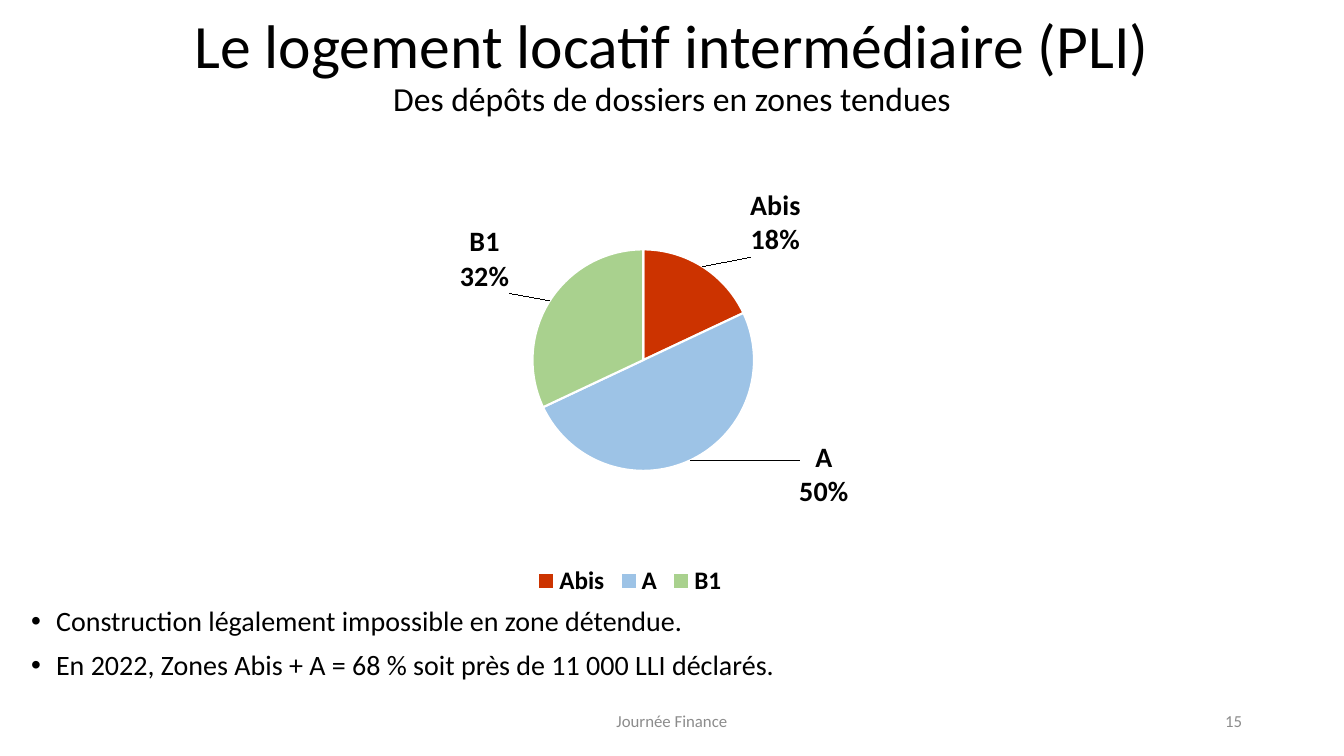
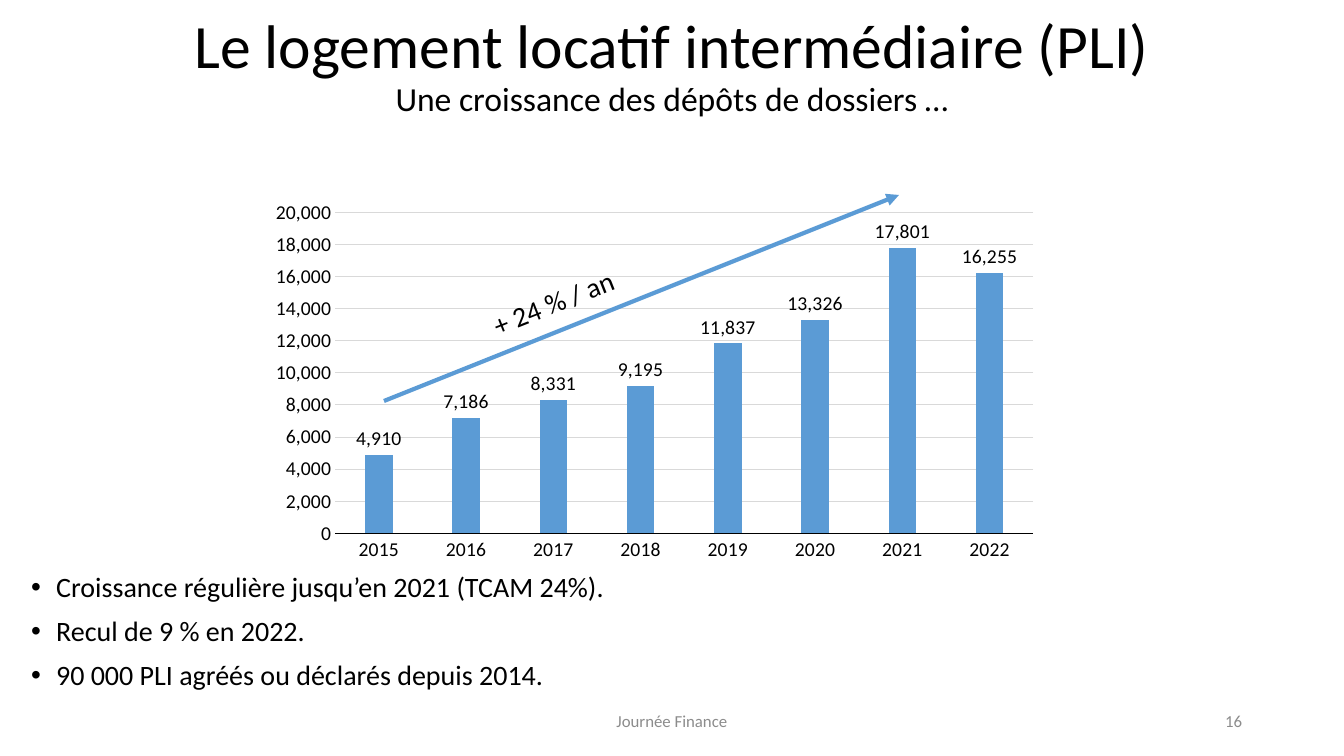
import copy

import pptx
import pptx.chart.data
import pptx.dml.color
import pptx.enum.chart
import pptx.enum.shapes
import pptx.enum.text
import pptx.oxml
import pptx.oxml.ns
import pptx.util

SCALE = 914400 / 100.8
FONT = "Calibri"
BLACK, GREY, GRID = "000000", "8C8C8C", "D9D9D9"
WHITE, BLUE = "FFFFFF", "5B9BD5"
ZONES = {"Abis": ("CC3300", 18), "A": ("9DC3E6", 50), "B1": ("A9D18E", 32)}
SHIFTS = [(0.05, -0.01), (0.12, -0.06), (-0.04, -0.01)]
FILES = {
    "2015": 4910, "2016": 7186, "2017": 8331, "2018": 9195,
    "2019": 11837, "2020": 13326, "2021": 17801, "2022": 16255,
}
ALIGN = pptx.enum.text.PP_ALIGN
CHART = pptx.enum.chart
qn = pptx.oxml.ns.qn


def px(*nums):
    return [pptx.util.Emu(round(n * SCALE)) for n in nums]


def rgb(code):
    return pptx.dml.color.RGBColor.from_string(code)


def xml(tag, body="", attrs=""):
    """Make one element in the namespace of its prefix."""
    names = pptx.oxml.ns.nsdecls("a", "c")
    return pptx.oxml.parse_xml(f"<{tag} {names} {attrs}>{body}</{tag}>")


def style(font, size, color=BLACK, bold=False):
    font.name, font.size, font.bold = FONT, pptx.util.Pt(size), bold
    font.color.rgb = rgb(color)


def stroke(line, color, width):
    line.color.rgb = rgb(color)
    line.width = pptx.util.Pt(width)


def write(par, text, size, color=BLACK):
    run = par.add_run()
    run.text = text
    style(run.font, size, color)


def place(shape, box):
    shape.left, shape.top, shape.width, shape.height = px(*box)


def set_title(slide, sub):
    title = slide.shapes.title
    place(title, (168, 9, 1008, 116))
    frame = title.text_frame
    frame.auto_size = pptx.enum.text.MSO_AUTO_SIZE.NONE
    frame.vertical_anchor = pptx.enum.text.MSO_ANCHOR.MIDDLE
    par = frame.paragraphs[0]
    par.alignment, par.line_spacing = ALIGN.CENTER, 0.9
    write(par, "Le logement locatif intermédiaire (PLI)", 44)
    par.add_line_break()
    write(par, sub, 24)


def set_list(slide, box, items):
    body = slide.placeholders[1]
    place(body, box)
    frame = body.text_frame
    frame.auto_size = pptx.enum.text.MSO_AUTO_SIZE.NONE
    indent = px(25)[0]
    for num, item in enumerate(items):
        par = frame.add_paragraph() if num else frame.paragraphs[0]
        props = par._p.get_or_add_pPr()
        props.set("marL", str(indent))
        props.set("indent", str(-indent))
        props.append(xml("a:buFont", attrs='typeface="Arial"'))
        props.append(xml("a:buChar", attrs='char="•"'))
        par.alignment, par.line_spacing = ALIGN.JUSTIFY, 0.9
        par.space_before = pptx.util.Pt(10 if num else 0)
        write(par, item, 20)


def add_text(slide, box, text, size, color=BLACK, align=ALIGN.LEFT):
    shape = slide.shapes.add_textbox(*px(*box))
    frame = shape.text_frame
    frame.word_wrap = True
    frame.vertical_anchor = pptx.enum.text.MSO_ANCHOR.MIDDLE
    frame.paragraphs[0].alignment = align
    write(frame.paragraphs[0], text, size, color)
    return shape


def add_slide(deck, num, sub, box, items):
    """Add a slide with its title, list and footer."""
    slide = deck.slides.add_slide(deck.slide_layouts[1])
    set_title(slide, sub)
    add_text(slide, (445, 701, 454, 40), "Journée Finance", 12, GREY, ALIGN.CENTER)
    add_text(slide, (950, 701, 302, 40), str(num), 12, GREY, ALIGN.RIGHT)
    set_list(slide, box, items)
    return slide


def add_chart(slide, kind, box, cats, vals, size):
    data = pptx.chart.data.CategoryChartData(number_format="#,##0")
    data.categories = cats
    data.add_series("Series 1", vals)
    chart = slide.shapes.add_chart(kind, *px(*box), data).chart
    chart.has_title = chart.has_legend = False
    style(chart.font, size)
    return chart


def layout(x, y, *size, inner=False):
    """Make a manual layout from fractions of the chart."""
    parts = '<c:layoutTarget val="inner"/>' if inner else ""
    if inner:
        parts += '<c:xMode val="edge"/><c:yMode val="edge"/>'
    for key, val in zip("xywh", (x, y, *size)):
        parts += f'<c:{key} val="{val}"/>'
    return xml("c:layout", f"<c:manualLayout>{parts}</c:manualLayout>")


def move_labels(chart):
    """Shift each label off its slice and draw a leader line to it."""
    tags = chart.element.find(".//" + qn("c:ser")).find(qn("c:dLbls"))
    for old in tags.findall(qn("c:showLeaderLines")):
        tags.remove(old)
    tags.append(xml("c:separator", "\n"))
    base = list(tags)
    for num, shift in enumerate(SHIFTS):
        tag = xml("c:dLbl")
        tag.append(xml("c:idx", attrs=f'val="{num}"'))
        tag.append(layout(*shift))
        for part in base:
            tag.append(copy.deepcopy(part))
        tags.insert(num, tag)
    tags.append(xml("c:showLeaderLines", attrs='val="1"'))


def add_pie(slide):
    colors, vals = zip(*ZONES.values())
    chart = add_chart(slide, CHART.XL_CHART_TYPE.PIE, (187, 171, 886, 430),
                      list(ZONES), vals, 10)
    area = chart.element.find(".//" + qn("c:plotArea"))
    for old in area.findall(qn("c:layout")):
        area.remove(old)
    area.insert(0, layout(0.39, 0.18, 0.25, 0.52, inner=True))
    chart.has_legend = True
    chart.legend.position = CHART.XL_LEGEND_POSITION.BOTTOM
    chart.legend.include_in_layout = False
    style(chart.legend.font, 18, bold=True)
    plot = chart.plots[0]
    plot.vary_by_categories = True
    series = plot.series[0]
    for num, color in enumerate(colors):
        look = series.points[num].format
        look.fill.solid()
        look.fill.fore_color.rgb = rgb(color)
        stroke(look.line, WHITE, 1.5)
    labels = series.data_labels
    labels.show_value = False
    labels.show_percentage = labels.show_category_name = True
    labels.number_format, labels.number_format_is_linked = "0%", False
    labels.position = CHART.XL_LABEL_POSITION.OUTSIDE_END
    style(labels.font, 20, bold=True)
    move_labels(chart)


def add_bars(slide):
    chart = add_chart(slide, CHART.XL_CHART_TYPE.COLUMN_CLUSTERED,
                      (260, 193, 789, 376), list(FILES), FILES.values(), 14)
    for axis in (chart.category_axis, chart.value_axis):
        axis.major_tick_mark = CHART.XL_TICK_MARK.NONE
        style(axis.tick_labels.font, 14)
    stroke(chart.category_axis.format.line, BLACK, 0.75)
    scale = chart.value_axis
    scale.format.line.fill.background()
    stroke(scale.major_gridlines.format.line, GRID, 0.75)
    scale.tick_labels.number_format = "#,##0"
    scale.tick_labels.number_format_is_linked = False
    plot = chart.plots[0]
    plot.vary_by_categories = False
    plot.gap_width, plot.overlap = 219, -27
    series = plot.series[0]
    series.format.fill.solid()
    series.format.fill.fore_color.rgb = rgb(BLUE)
    labels = series.data_labels
    labels.show_value = True
    labels.number_format, labels.number_format_is_linked = "#,##0", False
    labels.position = CHART.XL_LABEL_POSITION.OUTSIDE_END
    style(labels.font, 14)


def add_arrow(slide, *ends):
    kind = pptx.enum.shapes.MSO_CONNECTOR.STRAIGHT
    arrow = slide.shapes.add_connector(kind, *px(*ends))
    stroke(arrow.line, BLUE, 3)
    arrow.line._get_or_add_ln().append(xml("a:tailEnd", attrs='type="triangle"'))
    arrow._element.spPr.append(xml("a:effectLst"))


def main():
    deck = pptx.Presentation()
    deck.slide_width, deck.slide_height = px(1344, 756)
    slide = add_slide(
        deck, 15, "Des dépôts de dossiers en zones tendues", (21, 602, 1306, 99),
        ["Construction légalement impossible en zone détendue.",
         "En 2022, Zones Abis + A = 68 % soit près de 11 000 LLI déclarés."])
    add_pie(slide)
    slide = add_slide(
        deck, 16, "Une croissance des dépôts de dossiers …", (21, 568, 1306, 133),
        ["Croissance régulière jusqu’en 2021 (TCAM 24%).",
         "Recul de 9 % en 2022.",
         "90 000 PLI agréés ou déclarés depuis 2014."])
    add_bars(slide)
    add_arrow(slide, 384, 401, 899, 195)
    note = add_text(slide, (478, 271, 197, 44), "+ 24 % / an", 20)
    note.rotation = 338.3
    deck.save("out.pptx")


if __name__ == "__main__":
    main()
